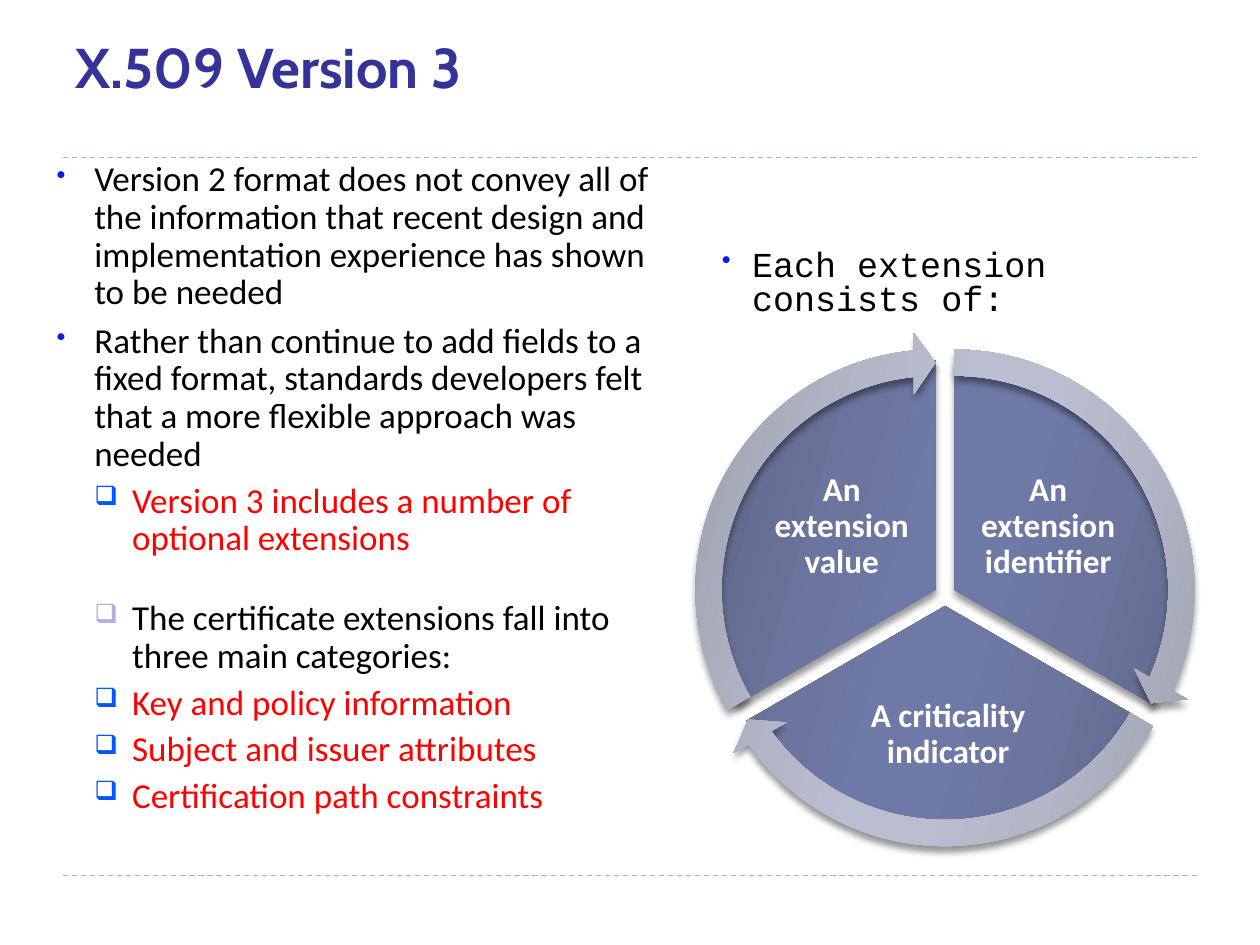
from math import cos, radians, sin

from lxml.etree import SubElement
from pptx import Presentation
from pptx.dml.color import RGBColor
from pptx.enum.dml import MSO_LINE
from pptx.enum.shapes import MSO_CONNECTOR, MSO_SHAPE
from pptx.enum.text import MSO_ANCHOR as Anchor, PP_ALIGN as Align
from pptx.oxml.ns import qn
from pptx.util import Pt

BLACK, RED, WHITE, INDIGO = "000000", "FF0000", "FFFFFF", "333399"
DOT, BOX = "•", "❑"
DOT_BLUE, BOX_BLUE, BOX_LILAC = "081DE8", "0156FF", "BAABE3"
RULE_COLOR = "9FB8CD"

TITLE = "X.509 Version 3"
# text, colour, bullet, bullet colour, left margin, space before
POINTS = [
    ("Version 2 format does not convey all of the information that recent design "
     "and implementation experience has shown to be needed", BLACK, DOT, DOT_BLUE, 21.6, 0),
    ("Rather than continue to add fields to a fixed format, standards developers felt "
     "that a more flexible approach was needed", BLACK, DOT, DOT_BLUE, 21.6, 6),
    ("Version 3 includes a number of optional extensions", RED, BOX, BOX_BLUE, 43.2, 5),
    ("The certificate extensions fall into three main categories:",
     BLACK, BOX, BOX_LILAC, 43.2, 24),
    ("Key and policy information", RED, BOX, BOX_BLUE, 43.2, 5),
    ("Subject and issuer attributes", RED, BOX, BOX_BLUE, 43.2, 5),
    ("Certification path constraints", RED, BOX, BOX_BLUE, 43.2, 5),
]
CYCLE_INTRO = "Each extension consists of:"
# label, label box (left, top, width, height), start and end angle in degrees
CYCLE = [
    ("An extension identifier", (552.2, 262, 93.6, 78), 270, 30),
    ("A criticality indicator", (471.6, 386, 140.4, 68), 30, 150),
    ("An extension value", (434.2, 262, 93.6, 78), 150, 270),
]
CENTER_X, CENTER_Y = 540, 340.1
GAP = 6.2  # how far each third moves out from the centre
WEDGE_RADIUS, ARROW_RADIUS = 131, 147.2
HEAD_ANGLE = 5.46
WEDGE_SHADES = "5D6585", "6B759E", "6E79A7"
ARROW_SHADES = "9A9CA9", "B2B6C6", "BABED0"


def color(hex_code):
    return RGBColor.from_string(hex_code)


def style_font(paragraph, name, size, hex_code, bold=False):
    font = paragraph.font
    font.name, font.size, font.bold = name, Pt(size), bold
    font.color.rgb = color(hex_code)


def add_text_frame(slide, box, anchor=Anchor.TOP):
    frame = slide.shapes.add_textbox(*map(Pt, box)).text_frame
    frame.word_wrap = True
    frame.vertical_anchor = anchor
    return frame


def add_bullet(paragraph, char, hex_code, margin, hanging):
    props = paragraph._p.get_or_add_pPr()
    props.set("marL", str(Pt(margin)))
    props.set("indent", str(-Pt(hanging)))
    tint = SubElement(props, qn("a:buClr"))
    SubElement(tint, qn("a:srgbClr"), val=hex_code)
    SubElement(props, qn("a:buSzPct"), val="76000")
    SubElement(props, qn("a:buChar"), char=char)


def add_rule(slide, y):
    rule = slide.shapes.add_connector(MSO_CONNECTOR.STRAIGHT, Pt(36), Pt(y), Pt(684), Pt(y))
    rule.line.color.rgb = color(RULE_COLOR)
    rule.line.width = Pt(0.75)
    rule.line.dash_style = MSO_LINE.DASH
    SubElement(rule._element.spPr, qn("a:effectLst"))


def add_shaded_third(slide, preset, radius, start, end, adjustments, shades):
    """Draw one third of the cycle, moved out along its middle angle."""
    middle = radians(start + 60)
    left = CENTER_X + GAP * cos(middle) - radius
    top = CENTER_Y + GAP * sin(middle) - radius
    third = slide.shapes.add_shape(preset, Pt(left), Pt(top), Pt(2 * radius), Pt(2 * radius))
    for index, value in enumerate(adjustments):
        third.adjustments[index] = value
    third.line.fill.background()

    third.fill.gradient()
    gradient = third._element.spPr.find(qn("a:gradFill"))
    stops = gradient.find(qn("a:gsLst"))
    for stop in list(stops):
        stops.remove(stop)
    edge, inner, core = shades
    for place, shade in zip((0, 30, 45, 55, 73, 100), (edge, inner, core, core, inner, edge)):
        stop = SubElement(stops, qn("a:gs"), pos=str(place * 1000))
        SubElement(stop, qn("a:srgbClr"), val=shade)
    gradient.find(qn("a:lin")).set("ang", str(16 * 60000))

    third.shadow.inherit = False
    effects = third._element.spPr.find(qn("a:effectLst"))
    shadow = SubElement(effects, qn("a:outerShdw"), blurRad=str(Pt(4)), dist=str(Pt(3.4)),
                        dir=str(90 * 60000), rotWithShape="0")
    tint = SubElement(shadow, qn("a:srgbClr"), val=BLACK)
    SubElement(tint, qn("a:alpha"), val="40000")


def angle(degrees):
    """Angle as an adjustment value."""
    return degrees * 0.6


def add_cycle(slide):
    for label, box, start, end in CYCLE:
        add_shaded_third(slide, MSO_SHAPE.PIE, WEDGE_RADIUS, start, end,
                         (angle(start), angle(end)), WEDGE_SHADES)
        frame = add_text_frame(slide, box, Anchor.MIDDLE)
        frame.margin_left = frame.margin_right = Pt(2)
        frame.margin_top = frame.margin_bottom = Pt(2)
        frame.text = label
        paragraph = frame.paragraphs[0]
        paragraph.alignment = Align.CENTER
        paragraph.line_spacing = 0.9
        style_font(paragraph, "Calibri", 19, WHITE, bold=True)
    for _, _, start, end in CYCLE:
        adjustments = (5.09 / 100, angle(HEAD_ANGLE), angle(end - HEAD_ANGLE),
                       angle(start), 5.93 / 100)
        add_shaded_third(slide, MSO_SHAPE.CIRCULAR_ARROW, ARROW_RADIUS, start, end,
                         adjustments, ARROW_SHADES)


def main():
    deck = Presentation()
    deck.slide_width, deck.slide_height = Pt(720), Pt(540)
    slide = deck.slides.add_slide(deck.slide_layouts[6])

    for y in (500.4, 90):
        add_rule(slide, y)

    title = add_text_frame(slide, (36, 12.2, 648, 48.2), Anchor.BOTTOM)
    title.text = TITLE
    style_font(title.paragraphs[0], "Cabin", 32, INDIGO, bold=True)

    points = add_text_frame(slide, (25.2, 88.6, 368.6, 396))
    points.text = "\n".join(point[0] for point in POINTS)
    for paragraph, point in zip(points.paragraphs, POINTS):
        _, text_color, bullet, bullet_color, margin, before = point
        paragraph.line_spacing = 0.9
        paragraph.space_before = Pt(before)
        add_bullet(paragraph, bullet, bullet_color, margin, 21.6)
        style_font(paragraph, "Calibri", 20, text_color)

    add_cycle(slide)

    intro = add_text_frame(slide, (405.4, 139.7, 300.2, 47.5))
    intro.text = CYCLE_INTRO
    paragraph = intro.paragraphs[0]
    paragraph.line_spacing = 0.8
    add_bullet(paragraph, DOT, DOT_BLUE, 17.3, 17.3)
    style_font(paragraph, "Courier New", 20, BLACK)

    deck.save("out.pptx")


if __name__ == "__main__":
    main()
